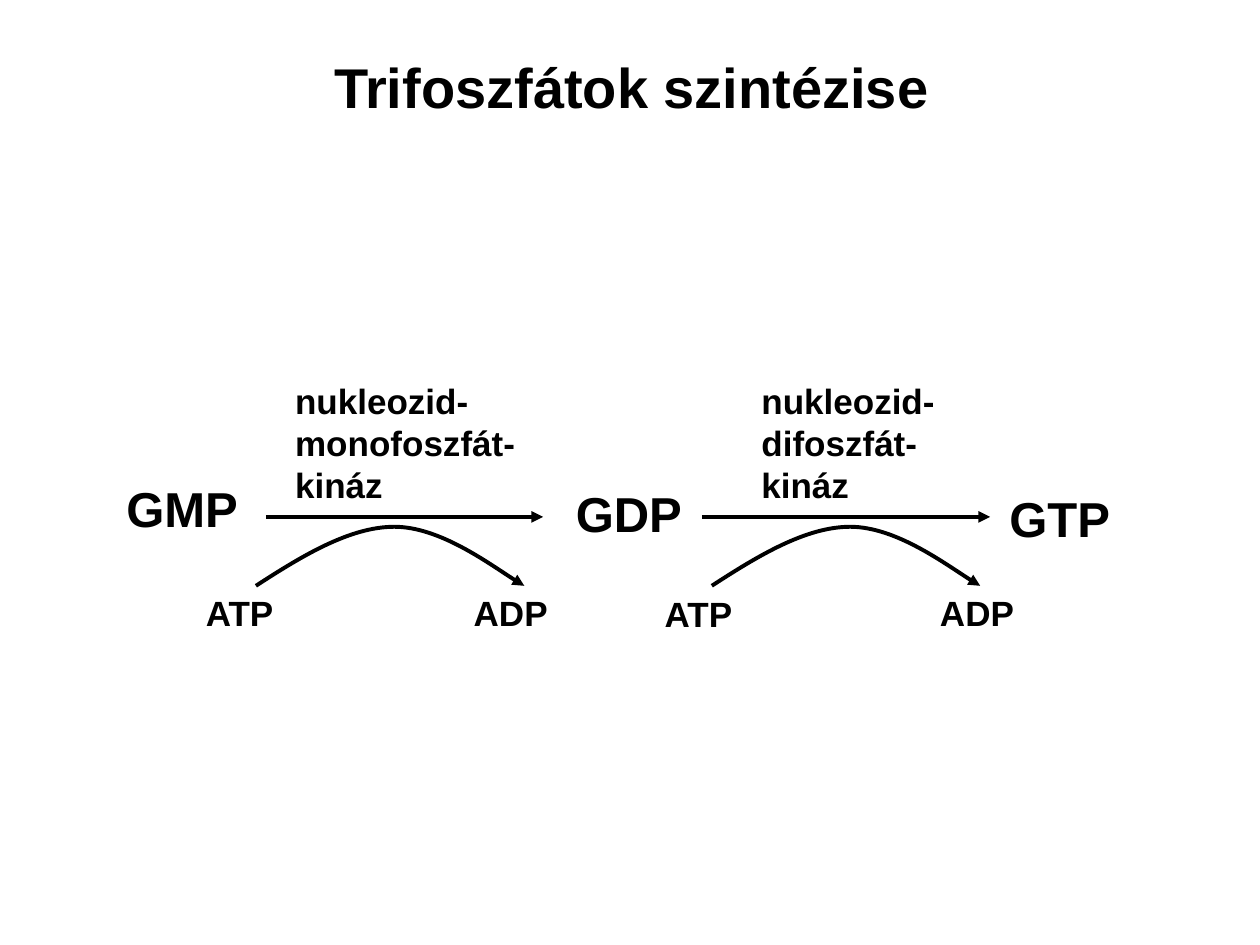
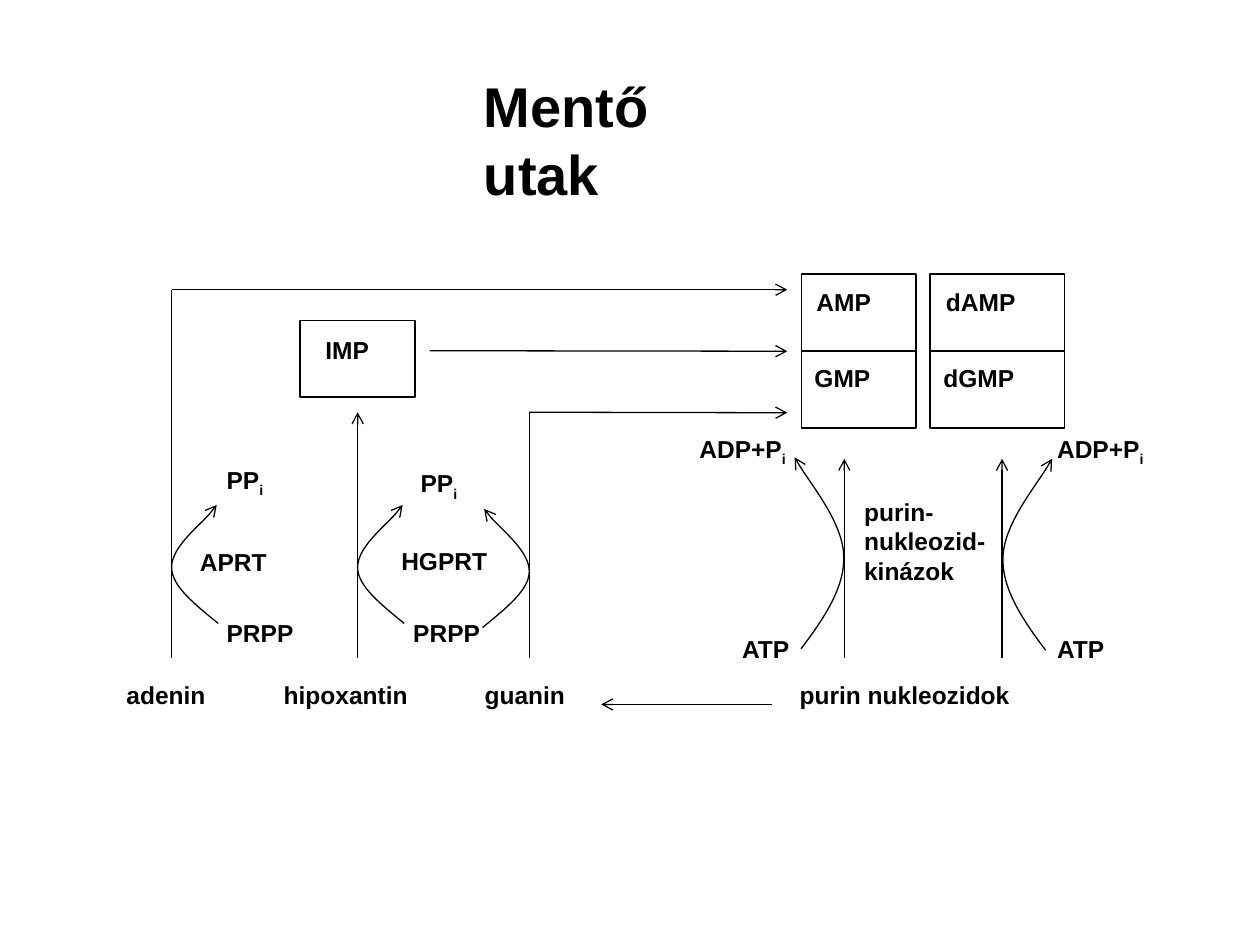
"""Build two slides on nucleotide synthesis and the salvage pathways."""
from typing import NamedTuple

from lxml.etree import SubElement
from pptx import Presentation
from pptx.dml.color import RGBColor as Rgb
from pptx.enum.shapes import MSO_CONNECTOR as Link, MSO_SHAPE as Form
from pptx.enum.text import MSO_ANCHOR as Anchor, MSO_AUTO_SIZE as Fit, PP_ALIGN as Align
from pptx.oxml.ns import qn
from pptx.util import Cm, Pt

INK = {"text": "000000", "line": "000000", "page": "FFFFFF"}
FONT = "Arial"
PITCH = {14: 0.68, 20: 0.85, 28: 1.19}
Dots = tuple[tuple[float, float], ...]


class Label(NamedTuple):
    text: str
    x: float
    y: float
    w: float
    size: int = 14


class Box(NamedTuple):
    x: float
    y: float
    w: float
    h: float = 1.55


class Ray(NamedTuple):
    x1: float
    y1: float
    x2: float
    y2: float
    head: str = "arrow"


class Bend(NamedTuple):
    dots: Dots
    x: float
    side: int = 1
    dy: float = 0


HUMP: Dots = ((0, 11.81), (0.94, 11.2), (1.9, 10.62), (2.79, 10.62),
              (3.71, 10.62), (5, 11.58), (5.41, 11.81))
BASE: Dots = ((0.94, 12.57), (0.48, 12.19), (0, 11.82), (0, 11.44),
              (0, 11.04), (0.76, 10.43), (0.91, 10.18))
KINASE: Dots = ((0.89, 13.11), (0.43, 12.5), (0, 11.86), (0.03, 11.23),
                (0.05, 10.59), (0.84, 9.6), (1.02, 9.25))

STEPS = [
    Label("GMP", 2.3, 9.53, 2.77, 28),
    Label("GDP", 11.36, 9.62, 2.64, 28),
    Label("GTP", 20.1, 9.73, 2.54, 28),
    Label("ATP", 3.9, 11.79, 1.93, 20),
    Label("ADP", 9.3, 11.79, 2.01, 20),
    Label("ATP", 13.15, 11.81, 1.93, 20),
    Label("ADP", 18.7, 11.79, 2.01, 20),
    Label("nukleozid-\nmonofoszfát-\nkináz", 5.7, 7.52, 5.1, 20),
    Label("nukleozid-\ndifoszfát-\nkináz", 15.1, 7.52, 4.2, 20),
]
STEP_RAYS = [
    Ray(5.36, 10.42, 10.95, 10.42, "triangle"),
    Ray(14.15, 10.42, 19.96, 10.42, "triangle"),
]
STEP_BENDS = [Bend(HUMP, x) for x in (5.16, 14.35)]

LOW, FEET = 13.27, 13.59
TIP = 15.87
ADE, HYP, GUA = 3.46, 7.21, 10.67
BOXES = [Box(6.05, 6.46, 2.32)] + [
    Box(x, y, w) for x, w in ((16.16, 2.31), (18.75, 2.71)) for y in (5.53, 7.08)
]
PATHS = [
    Label("IMP", 6.31, 6.63, 1.5),
    Label("AMP", 16.21, 5.66, 1.73),
    Label("dAMP", 18.82, 5.66, 2.06),
    Label("GMP", 16.17, 7.19, 1.75),
    Label("dGMP", 18.77, 7.19, 2.08),
    Label("adenin", 2.3, FEET, 2.26),
    Label("hipoxantin", 5.47, FEET, 3.23),
    Label("guanin", 9.52, FEET, 2.29),
    Label("purin nukleozidok", 15.87, FEET, 5.08),
    Label("ATP", 14.71, 12.65, 1.57),
    Label("ATP", 21.06, 12.65, 1.57),
    Label("ADP+P_i", 13.85, 8.62, 2.44),
    Label("ADP+P_i", 21.06, 8.62, 2.44),
    Label("purin-\nnukleozid-\nkinázok", 17.17, 9.89, 3.18),
    Label("APRT", 3.78, 10.9, 2.01),
    Label("HGPRT", 7.84, 10.88, 2.41),
    Label("PRPP", 4.32, 12.34, 2.01),
    Label("PRPP", 8.08, 12.34, 2.01),
    Label("PP_i", 4.32, 9.25, 1.45),
    Label("PP_i", 8.23, 9.32, 1.45),
]
PATH_RAYS = [
    Ray(ADE, LOW, ADE, 5.84, "none"),
    Ray(ADE, 5.84, TIP, 5.84),
    Ray(HYP, LOW, HYP, 8.31),
    Ray(GUA, LOW, GUA, 8.31, "none"),
    Ray(GUA, 8.31, TIP, 8.32),
    Ray(8.66, 7.07, TIP, 7.08),
    Ray(17.02, 13.26, 17.02, 9.25),
    Ray(20.2, 13.26, 20.2, 9.25),
    Ray(15.57, 14.2, 12.12, 14.2),
]
PATH_BENDS = [
    Bend(BASE, ADE), Bend(BASE, HYP), Bend(BASE, GUA, -1, 0.08),
    Bend(KINASE, 17.04, -1, -0.03), Bend(KINASE, 20.19),
]


def write(frame, text: str, *, size: int, wrap: bool = False, fit=Fit.SHAPE_TO_FIT_TEXT) -> None:
    """Fill a text frame; an underscore starts a subscript."""
    frame.word_wrap, frame.auto_size = wrap, fit
    frame.vertical_anchor = Anchor.TOP
    for i, row in enumerate(text.split("\n")):
        para = frame.add_paragraph() if i else frame.paragraphs[0]
        para.alignment = Align.LEFT
        for j, part in enumerate(row.split("_")):
            run = para.add_run()
            run.text = part
            font = run.font
            font.name, font.size, font.bold = FONT, Pt(size), True
            font.color.rgb = Rgb.from_string(INK["text"])
            if j:
                font._element.set("baseline", "-25000")


def place(shape, x: float, y: float, w: float, h: float) -> None:
    """Move and size a shape."""
    shape.left, shape.top, shape.width, shape.height = map(Cm, (x, y, w, h))


def stroke(shape, width: float, head: str = "none") -> None:
    """Set line colour, width and end arrow."""
    line = shape.line
    line.color.rgb = Rgb.from_string(INK["line"])
    line.width = Pt(width)
    if head != "none":
        SubElement(line._get_or_add_ln(), qn("a:tailEnd"), type=head)


def draw_label(slide, item: Label) -> None:
    """Draw a text box."""
    high = 0.25 + PITCH[item.size] * len(item.text.split("\n"))
    box = slide.shapes.add_textbox(*map(Cm, (item.x, item.y, item.w, high)))
    write(box.text_frame, item.text, size=item.size)


def draw_box(slide, item: Box) -> None:
    """Draw an unfilled frame."""
    shape = slide.shapes.add_shape(Form.RECTANGLE, *map(Cm, item))
    shape.shadow.inherit = False
    shape.fill.background()
    stroke(shape, 1)


def draw_ray(slide, item: Ray, width: float) -> None:
    """Draw a straight line or arrow."""
    link = slide.shapes.add_connector(Link.STRAIGHT, *map(Cm, item[:4]))
    stroke(link, width, item.head)
    SubElement(link._element.spPr, qn("a:effectLst"))


def draw_bend(slide, item: Bend, width: float, head: str) -> None:
    """Draw a curved arrow of two cubic segments."""
    dots = [(Cm(item.x + item.side * x), Cm(y + item.dy)) for x, y in item.dots]
    pen = slide.shapes.build_freeform(*dots[0])
    pen.add_line_segments(dots[1:], close=False)
    shape = pen.convert_to_shape()
    steps = list(shape._element.iter(qn("a:lnTo")))
    track = steps[0].getparent()
    for i in range(0, len(steps), 3):
        cubic = SubElement(track, qn("a:cubicBezTo"))
        for step in steps[i:i + 3]:
            cubic.append(step[0])
            track.remove(step)
    shape.shadow.inherit = False
    shape.fill.background()
    stroke(shape, width, head)


def add_slide(deck, title: str, spot: tuple[float, float, float, float], wrap: bool = False):
    """Add a slide with its title."""
    slide = deck.slides.add_slide(deck.slide_layouts[5])
    fill = slide.background.fill
    fill.solid()
    fill.fore_color.rgb = Rgb.from_string(INK["page"])
    head = slide.shapes.title
    place(head, *spot)
    write(head.text_frame, title, size=32, wrap=wrap, fit=Fit.NONE)
    return slide


def draw(slide, labels: list[Label], rays: list[Ray], bends: list[Bend],
         width: float, head: str) -> None:
    """Draw the parts of one scheme."""
    for ray in rays:
        draw_ray(slide, ray, width)
    for bend in bends:
        draw_bend(slide, bend, width, head)
    for label in labels:
        draw_label(slide, label)


def main() -> None:
    """Build and save the deck."""
    deck = Presentation()
    deck.slide_width, deck.slide_height = Cm(25.4), Cm(19.05)
    slide = add_slide(deck, "Trifoszfátok szintézise", (6.48, 0.93, 12.52, 1.6))
    draw(slide, STEPS, STEP_RAYS, STEP_BENDS, 2.25, "triangle")
    slide = add_slide(deck, "Mentő utak", (9.5, 1.32, 5.6, 2.96), wrap=True)
    for box in BOXES:
        draw_box(slide, box)
    draw(slide, PATHS, PATH_RAYS, PATH_BENDS, 0.75, "arrow")
    deck.save("out.pptx")


if __name__ == "__main__":
    main()
